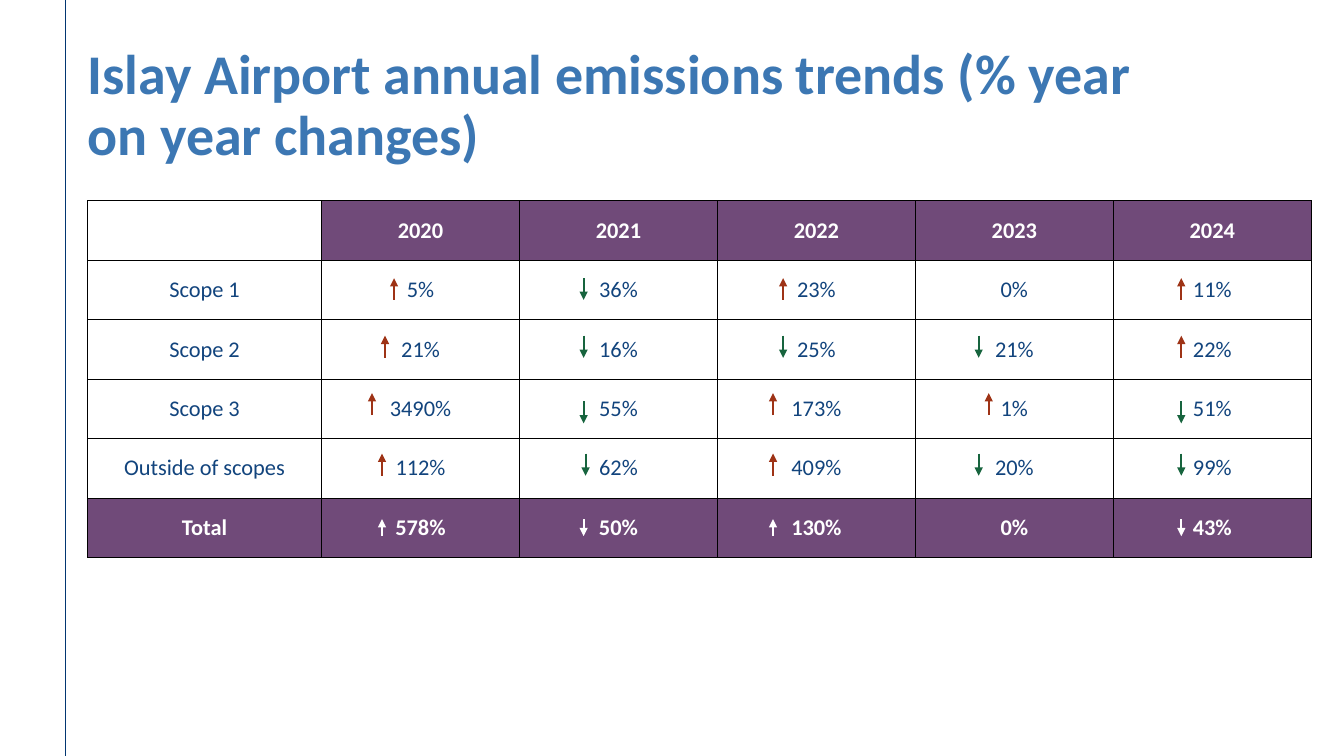
from lxml.etree import SubElement
from pptx import Presentation
from pptx.dml.color import RGBColor
from pptx.enum.shapes import MSO_CONNECTOR
from pptx.enum.text import MSO_ANCHOR, PP_ALIGN
from pptx.oxml.ns import qn
from pptx.util import Pt

COLOURS = {
    "title": "3C77B3",
    "rule": "023671",
    "band": "704A79",
    "body": "12447D",
    "white": "FFFFFF",
    "border": "000000",
    "rise": "9E3316",
    "fall": "17643E",
}
FONT = "Calibri"

ROWS = [
    ["", "2020", "2021", "2022", "2023", "2024"],
    ["Scope 1", "5%", "36%", "23%", "0%", "11%"],
    ["Scope 2", "21%", "16%", "25%", "21%", "22%"],
    ["Scope 3", "3490%", "55%", "173%", "1%", "51%"],
    ["Outside of scopes", "112%", "62%", "409%", "20%", "99%"],
    ["Total", "578%", "50%", "130%", "0%", "43%"],
]
TOTAL_ROW = len(ROWS) - 1

# Per table row: top of rising arrows, top of falling arrows, length,
# then the direction and x of each arrow
ARROWS = [
    (198.7, 198.7, 15.5, [("rise", 281.5), ("fall", 416.9), ("rise", 559.4), ("rise", 843.8)]),
    (239.8, 239.8, 15.8, [("rise", 275), ("fall", 416.9), ("fall", 559.4), ("fall", 699.1), ("rise", 843.8)]),
    (280.8, 286.6, 15.8, [("rise", 265.7), ("fall", 416.9), ("rise", 552.2), ("rise", 706.3), ("fall", 843.8)]),
    (324, 324, 15.8, [("rise", 272.9), ("fall", 418.3), ("rise", 552.2), ("fall", 699.1), ("fall", 843.8)]),
    (370.8, 370.8, 12.2, [("rise", 272.9), ("fall", 416.9), ("rise", 552.2), ("fall", 843.8)]),
]

deck = Presentation()
deck.slide_width, deck.slide_height = Pt(960), Pt(540)
page = deck.slides.add_slide(deck.slide_layouts[6])


def add_line(x, start, end, colour, width):
    """Draw a vertical line without a shadow and return it."""
    line = page.shapes.add_connector(MSO_CONNECTOR.STRAIGHT, Pt(x), Pt(start), Pt(x), Pt(end))
    line.line.color.rgb = RGBColor.from_string(COLOURS[colour])
    line.line.width = Pt(width)
    SubElement(line._element.spPr, qn("a:effectLst"))
    return line


def style_text(para, size, colour, bold):
    for span in para.runs:
        span.font.name = FONT
        span.font.size = Pt(size)
        span.font.bold = bold
        span.font.color.rgb = RGBColor.from_string(COLOURS[colour])


add_line(46.8, 0, 540, "rule", 1)

# Title
title = page.shapes.add_textbox(Pt(62.6), Pt(33.1), Pt(789.1), Pt(76.3))
frame = title.text_frame
frame.word_wrap = True
frame.margin_left = frame.margin_right = frame.margin_top = frame.margin_bottom = 0
frame.text = "Islay Airport annual emissions trends (% year on year changes)"
frame.paragraphs[0].line_spacing = 0.9
style_text(frame.paragraphs[0], 40, "title", True)

# Table
table = page.shapes.add_table(len(ROWS), len(ROWS[0]), Pt(62.6), Pt(143.3), Pt(874.1), Pt(255)).table
table.first_row = table.horz_banding = False
for index, column in enumerate(table.columns):
    column.width = Pt(141.4 if index else 167.1)
for row in table.rows:
    row.height = Pt(42.5)

for row_index, values in enumerate(ROWS):
    for column_index, value in enumerate(values):
        cell = table.cell(row_index, column_index)
        cell.margin_left = cell.margin_right = cell.margin_top = cell.margin_bottom = 0
        cell.vertical_anchor = MSO_ANCHOR.MIDDLE
        properties = cell._tc.get_or_add_tcPr()
        for side in ("lnL", "lnR", "lnT", "lnB"):
            border = SubElement(properties, qn(f"a:{side}"), w=str(Pt(0.5)))
            fill = SubElement(border, qn("a:solidFill"))
            SubElement(fill, qn("a:srgbClr"), val=COLOURS["border"])

        banded = row_index in (0, TOTAL_ROW) and value != ""
        if banded:
            cell.fill.solid()
            cell.fill.fore_color.rgb = RGBColor.from_string(COLOURS["band"])
        else:
            cell.fill.background()
        cell.text_frame.text = value
        para = cell.text_frame.paragraphs[0]
        para.alignment = PP_ALIGN.CENTER
        style_text(para, 16, "white" if banded else "body", banded)

# Trend arrows
for row_index, (rise_top, fall_top, length, arrows) in enumerate(ARROWS, start=1):
    for direction, x in arrows:
        colour = "white" if row_index == TOTAL_ROW else direction
        if direction == "rise":
            arrow = add_line(x, rise_top + length, rise_top, colour, 1.5)
        else:
            arrow = add_line(x, fall_top, fall_top + length, colour, 1.5)
        SubElement(arrow.line._get_or_add_ln(), qn("a:tailEnd"), type="triangle")

deck.save("out.pptx")
